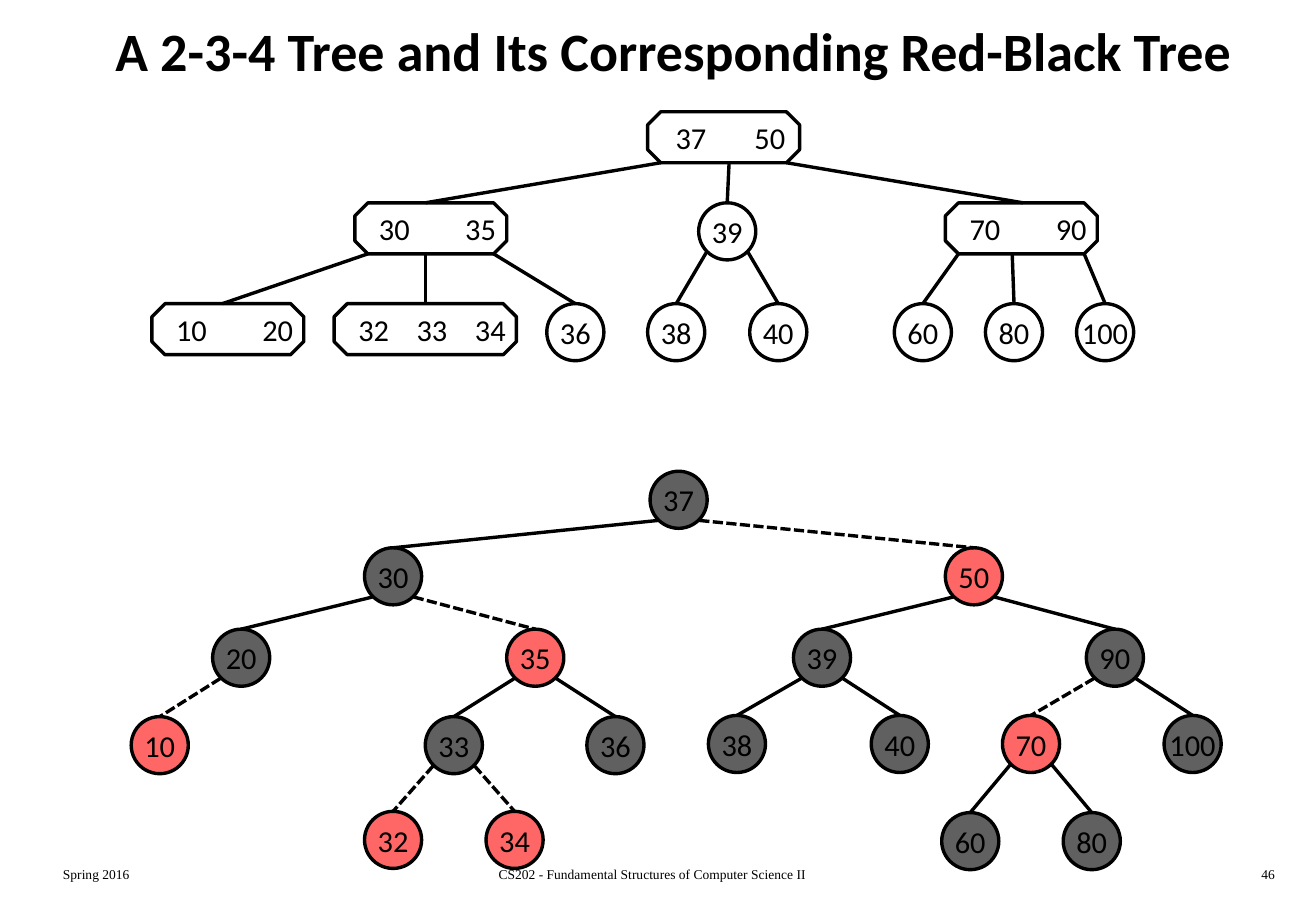
from dataclasses import dataclass
from typing import Any, Optional

from lxml import etree
from pptx import Presentation
from pptx import util as u
from pptx.dml import color
from pptx.enum import dml, shapes, text
from pptx.oxml import ns


@dataclass(frozen=True)
class Theme:
    ink: str = "000000"
    white: str = "FFFFFF"
    red: str = "FF6666"
    gray: str = "606060"
    sans: str = "Calibri"
    serif: str = "Times New Roman"
    head: float = 32
    key: float = 18
    foot: float = 8
    line: float = 2


THEME = Theme()
SIZE = 0.47
HIGH = 0.42
CUT = 0.257
DIGITS = 0.25
RIM = 0.17
LEFT, MID, RIGHT = -1, 0, 1


@dataclass(frozen=True)
class Ball:
    label: str
    x: float
    y: float
    root: str = ""
    side: int = MID
    fill: str = THEME.white

    def port(self, side: int) -> tuple[float, float]:
        return self.x + SIZE / 2 + side * RIM, self.y + SIZE / 2 + RIM

    def peak(self) -> float:
        return self.x + SIZE / 2


@dataclass(frozen=True)
class Block:
    label: str
    x: float
    y: float
    root: str = ""
    side: int = MID
    fill: str = ""
    gap: float = 0.71
    wide: float = 1.25
    top: float = 0
    base: float = 0

    def port(self, side: int) -> tuple[float, float]:
        half = self.wide / 2
        x = self.x + half + side * (half - CUT * HIGH) if side else self.base
        return x, self.y + HIGH

    def peak(self) -> float:
        return self.top


@dataclass(frozen=True)
class Label:
    words: str
    x: float
    y: float
    wide: float
    high: float
    size: float = THEME.foot
    face: str = THEME.serif
    align: Any = text.PP_ALIGN.LEFT
    anchor: Any = text.MSO_ANCHOR.TOP
    bold: bool = False


Node = Ball | Block

LABELS = [
    Label("A 2-3-4 Tree and Its Corresponding Red-Black Tree", 0.42, 0.08, 10.25, 0.67,
          THEME.head, THEME.sans, text.PP_ALIGN.CENTER, text.MSO_ANCHOR.MIDDLE, True),
    Label("Spring 2016", 0.42, 7.08, 2.26, 0.25),
    Label("CS202 - Fundamental Structures of Computer Science II", 3.34, 7.08, 4.06, 0.25,
          align=text.PP_ALIGN.CENTER),
    Label("46", 8.33, 7.08, 2.26, 0.25, align=text.PP_ALIGN.RIGHT),
]

MULTI: list[Node] = [
    Block("37 50", 5.33, 0.92, gap=0.65, base=6),
    Block("30 35", 2.92, 1.67, "37 50", LEFT, top=3.5, base=3.5),
    Ball("39", 5.75, 1.67, "37 50", MID),
    Block("70 90", 7.78, 1.67, "37 50", RIGHT, top=8.42, base=8.33),
    Block("10 20", 1.25, 2.5, "30 35", LEFT, top=1.83),
    Block("32 33 34", 2.75, 2.5, "30 35", MID, gap=0.48, wide=1.5, top=3.5),
    Ball("36", 4.5, 2.5, "30 35", RIGHT),
    Ball("38", 5.33, 2.5, "39", LEFT),
    Ball("40", 6.17, 2.5, "39", RIGHT),
    Ball("60", 7.36, 2.5, "70 90", LEFT),
    Ball("80", 8.11, 2.5, "70 90", MID),
    Ball("100", 8.86, 2.5, "70 90", RIGHT),
]

BINARY: list[Node] = [
    Ball("37", 5.35, 3.88, fill=THEME.gray),
    Ball("30", 3, 4.51, "37", LEFT, THEME.gray),
    Ball("50", 7.78, 4.51, "37", RIGHT, THEME.red),
    Ball("20", 1.75, 5.18, "30", LEFT, THEME.gray),
    Ball("35", 4.17, 5.18, "30", RIGHT, THEME.red),
    Ball("39", 6.53, 5.18, "50", LEFT, THEME.gray),
    Ball("90", 8.94, 5.18, "50", RIGHT, THEME.gray),
    Ball("10", 1.08, 5.9, "20", LEFT, THEME.red),
    Ball("33", 3.5, 5.9, "35", LEFT, THEME.gray),
    Ball("36", 4.83, 5.9, "35", RIGHT, THEME.gray),
    Ball("38", 5.83, 5.89, "39", LEFT, THEME.gray),
    Ball("40", 7.17, 5.89, "39", RIGHT, THEME.gray),
    Ball("70", 8.25, 5.89, "90", LEFT, THEME.red),
    Ball("100", 9.58, 5.89, "90", RIGHT, THEME.gray),
    Ball("32", 3, 6.68, "33", LEFT, THEME.red),
    Ball("34", 4, 6.68, "33", RIGHT, THEME.red),
    Ball("60", 7.75, 6.69, "70", LEFT, THEME.gray),
    Ball("80", 8.75, 6.69, "70", RIGHT, THEME.gray),
]


def assign(item: Any, values: dict[str, Any]) -> None:
    for name, value in values.items():
        setattr(item, name, value)


def write(frame: Any, words: str, size: float, face: str, align: Any, bold: bool = False) -> Any:
    para = frame.paragraphs[0]
    para.alignment = align
    run = para.add_run()
    run.text = words
    assign(run.font, {"size": u.Pt(size), "name": face, "bold": bold})
    run.font.color.rgb = color.RGBColor.from_string(THEME.ink)
    return para


def stroke(line: Any) -> None:
    line.color.rgb = color.RGBColor.from_string(THEME.ink)
    line.width = u.Pt(THEME.line)


def draw_label(slide: Any, label: Label) -> None:
    box = slide.shapes.add_textbox(*map(u.Inches, (label.x, label.y, label.wide, label.high)))
    assign(box.text_frame, {"word_wrap": True, "vertical_anchor": label.anchor})
    write(box.text_frame, label.words, label.size, label.face, label.align, label.bold)


def draw_node(slide: Any, node: Node) -> Any:
    block = isinstance(node, Block)
    kind = shapes.MSO_SHAPE.OCTAGON if block else shapes.MSO_SHAPE.OVAL
    wide, high = (node.wide, HIGH) if block else (SIZE, SIZE)
    shape = slide.shapes.add_shape(kind, *map(u.Inches, (node.x, node.y, wide, high)))
    shape.shadow.inherit = False
    stroke(shape.line)
    if node.fill:
        shape.fill.solid()
        shape.fill.fore_color.rgb = color.RGBColor.from_string(node.fill)
    else:
        shape.fill.background()
    frame = shape.text_frame
    assign(frame, {"word_wrap": block, "vertical_anchor": text.MSO_ANCHOR.MIDDLE, "margin_left": 0,
                   "margin_right": 0, "margin_top": 0, "margin_bottom": 0})
    keys = node.label.split()
    align = text.PP_ALIGN.LEFT if block else text.PP_ALIGN.CENTER
    para = write(frame, "\t".join(keys), THEME.key, THEME.sans, align)
    if block:
        shape.adjustments[0] = CUT
        steps = range(1, len(keys))
        frame.margin_left = u.Inches((wide - len(steps) * node.gap - DIGITS) / 2)
        tabs = etree.SubElement(para._p.get_or_add_pPr(), ns.qn("a:tabLst"))
        for step in steps:
            etree.SubElement(tabs, ns.qn("a:tab"), pos=str(u.Inches(step * node.gap)), algn="l")
    return shape


def draw_edge(slide: Any, root: Node, node: Node, shape: Any) -> None:
    ends = (*root.port(node.side), node.peak(), node.y)
    edge = slide.shapes.add_connector(shapes.MSO_CONNECTOR.STRAIGHT, *map(u.Inches, ends))
    if isinstance(node, Ball):
        edge.end_connect(shape, 0)
    stroke(edge.line)
    if node.fill == THEME.red:
        edge.line.dash_style = dml.MSO_LINE.SQUARE_DOT
    etree.SubElement(edge._element.spPr, ns.qn("a:effectLst"))


def draw_tree(slide: Any, nodes: list[Node]) -> None:
    names = {node.label: node for node in nodes}
    for node in nodes:
        shape = draw_node(slide, node)
        root: Optional[Node] = names.get(node.root)
        if root:
            draw_edge(slide, root, node, shape)


def main() -> None:
    deck = Presentation()
    assign(deck, {"slide_width": u.Inches(10.83), "slide_height": u.Inches(7.5)})
    slide = deck.slides.add_slide(deck.slide_layouts[6])
    for tree in (MULTI, BINARY):
        draw_tree(slide, tree)
    for label in LABELS:
        draw_label(slide, label)
    deck.save("out.pptx")


if __name__ == "__main__":
    main()
